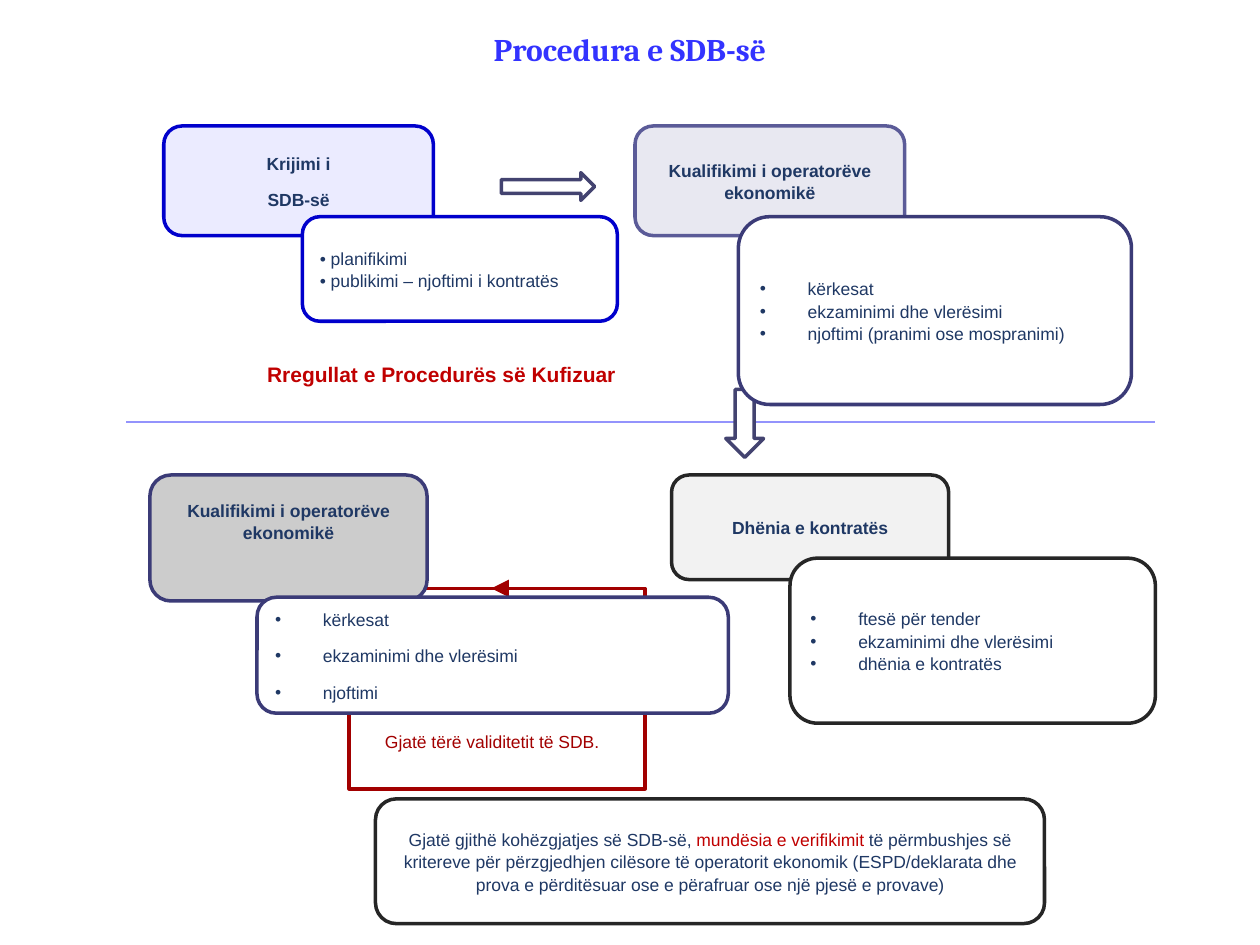
from lxml import etree
from pptx import Presentation
from pptx import util as u
from pptx.dml.color import RGBColor
from pptx.enum import shapes, text
from pptx.oxml.ns import qn

WHITE = RGBColor(0xFF, 0xFF, 0xFF)
NAVY = RGBColor(0x1F, 0x38, 0x64)
RED = RGBColor(0xC0, 0x00, 0x00)
DARK_RED = RGBColor(0xA2, 0x00, 0x00)
TITLE = RGBColor(0x33, 0x33, 0xFF)
BLUE = RGBColor(0x00, 0x00, 0xCC)
PALE_BLUE = RGBColor(0xEB, 0xEB, 0xFF)
INDIGO = RGBColor(0x3B, 0x3B, 0x77)
VIOLET = RGBColor(0x5B, 0x5B, 0x98)
PALE_VIOLET = RGBColor(0xE8, 0xE8, 0xF1)
SLATE = RGBColor(0x43, 0x43, 0x70)
RULE = RGBColor(0x93, 0x93, 0xFC)
BLACK = RGBColor(0x26, 0x26, 0x26)
GREY = RGBColor(0xCC, 0xCC, 0xCC)
PALE_GREY = RGBColor(0xF2, 0xF2, 0xF2)

KIND = shapes.MSO_SHAPE
CENTER, LEFT = text.PP_ALIGN.CENTER, text.PP_ALIGN.LEFT
TOP, MIDDLE = text.MSO_ANCHOR.TOP, text.MSO_ANCHOR.MIDDLE


class Board:
    font = "Arial"
    size = 10
    stroke = 2
    indent = u.Inches(0.38)

    def __init__(self, slide):
        self.items = slide.shapes

    def shape(self, kind, at, fill=None, line=None):
        item = self.items.add_shape(kind, *map(u.Inches, at))
        item.shadow.inherit = False
        if fill is None:
            item.fill.background()
        else:
            item.fill.solid()
            item.fill.fore_color.rgb = fill
        if line is None:
            item.line.fill.background()
        else:
            item.line.color.rgb = line
            item.line.width = u.Pt(self.stroke)
        return item

    def letter(self, item, paras, color=NAVY, bold=False, align=CENTER,
               anchor=MIDDLE, gap=8, size=None, font=None):
        """Put text in a shape; each paragraph is a string or a list of (text, color) runs."""
        frame = item.text_frame
        frame.word_wrap = True
        frame.vertical_anchor = anchor
        for i, para in enumerate(paras):
            p = frame.add_paragraph() if i else frame.paragraphs[0]
            p.alignment = align
            p.line_spacing = 1.07
            p.space_after = u.Pt(gap)
            if isinstance(para, str):
                p.text = para
                tints = [color]
            else:
                tints = [tint for _, tint in para]
                for words, _ in para:
                    p.add_run().text = words
            for run, tint in zip(p.runs, tints * len(p.runs)):
                run.font.name = font or self.font
                run.font.size = u.Pt(size or self.size)
                run.font.bold = bold
                run.font.color.rgb = tint

    def box(self, at, paras, fill=WHITE, line=None, **look):
        item = self.shape(KIND.ROUNDED_RECTANGLE, at, fill, line)
        self.letter(item, paras, **look)
        return item

    def steps(self, at, paras, line, gap=0):
        """Rounded box with a bulleted list."""
        item = self.box(at, paras, line=line, align=LEFT, gap=gap)
        for p in item.text_frame.paragraphs:
            props = p._p.get_or_add_pPr()
            props.set("marL", str(self.indent))
            props.set("indent", str(-self.indent))
            etree.SubElement(props, qn("a:buFont"), typeface=self.font)
            etree.SubElement(props, qn("a:buChar"), char="•")

    def label(self, at, words, **look):
        item = self.items.add_textbox(*map(u.Inches, at))
        self.letter(item, [words], anchor=TOP, **look)

    def line(self, ends, color, head=False):
        item = self.items.add_connector(
            shapes.MSO_CONNECTOR.STRAIGHT, *map(u.Inches, ends))
        item.line.color.rgb = color
        item.line.width = u.Pt(0.75)
        props = item._element.spPr
        if head:
            etree.SubElement(props.get_or_add_ln(), qn("a:tailEnd"),
                             type="triangle", w="lg", len="lg")
        etree.SubElement(props, qn("a:effectLst"))


def main():
    deck = Presentation()
    deck.slide_width, deck.slide_height = u.Inches(10), u.Inches(7.5)
    board = Board(deck.slides.add_slide(deck.slide_layouts[6]))

    board.label((0.75, 0.17, 8.5, 0.69), "Procedura e SDB-së",
                color=TITLE, bold=True, size=18, font="Cambria")
    board.line((1, 3.35, 9.17, 3.35), RULE)
    down = board.shape(KIND.RIGHT_ARROW, (5.64, 3.21, 0.54, 0.3), WHITE, SLATE)
    down.rotation = 90

    # Loop back to qualification
    note = board.shape(KIND.RECTANGLE, (2.66, 5.74, 2.49, 0.27), WHITE)
    board.letter(note, ["Gjatë tërë validitetit të SDB."],
                 color=DARK_RED, anchor=TOP)
    board.shape(KIND.RECTANGLE, (2.77, 4.67, 2.35, 1.59), line=DARK_RED)
    board.line((4.54, 4.67, 3.9, 4.67), DARK_RED, head=True)

    # Lower half
    qualify = "Kualifikimi i operatorëve ekonomikë"
    again = board.box((1.19, 3.77, 2.2, 1), [qualify], GREY, INDIGO, bold=True)
    again.text_frame.margin_bottom = u.Inches(0.32)
    board.steps((2.04, 4.74, 3.74, 0.92),
                ["kërkesat", "ekzaminimi dhe vlerësimi", "njoftimi"],
                INDIGO, gap=8)
    board.box((5.33, 3.77, 2.2, 0.83), ["Dhënia e kontratës"],
              PALE_GREY, BLACK, bold=True)
    board.steps((6.27, 4.43, 2.9, 1.31),
                ["ftesë për tender", "ekzaminimi dhe vlerësimi",
                 "dhënia e kontratës"], BLACK)
    board.box((2.98, 6.34, 5.31, 0.99), [[
        ("Gjatë gjithë kohëzgjatjes së SDB-së,", NAVY),
        (" mundësia e verifikimit ", RED),
        ("të përmbushjes së kritereve për përzgjedhjen cilësore të "
         "operatorit ekonomik (ESPD/deklarata dhe prova e përditësuar "
         "ose e përafruar ose një pjesë e provave)", NAVY),
    ]], line=BLACK)

    # Upper half
    board.box((1.3, 1, 2.14, 0.87), ["Krijimi i", "SDB-së"],
              PALE_BLUE, BLUE, bold=True)
    board.box((2.4, 1.72, 2.5, 0.83),
              ["• planifikimi\v• publikimi – njoftimi i kontratës"],
              line=BLUE, align=LEFT)
    board.box((5.04, 1, 2.14, 0.87), [qualify], PALE_VIOLET, VIOLET, bold=True)
    board.steps((5.86, 1.72, 3.12, 1.49),
                ["kërkesat", "ekzaminimi dhe vlerësimi",
                 "njoftimi (pranimi ose mospranimi)"], INDIGO)
    board.shape(KIND.RIGHT_ARROW, (3.98, 1.37, 0.74, 0.22), line=SLATE)
    board.box((1.58, 2.64, 3.85, 0.65), ["Rregullat e Procedurës së Kufizuar"],
              color=RED, bold=True, size=12)

    deck.save("out.pptx")


if __name__ == "__main__":
    main()
